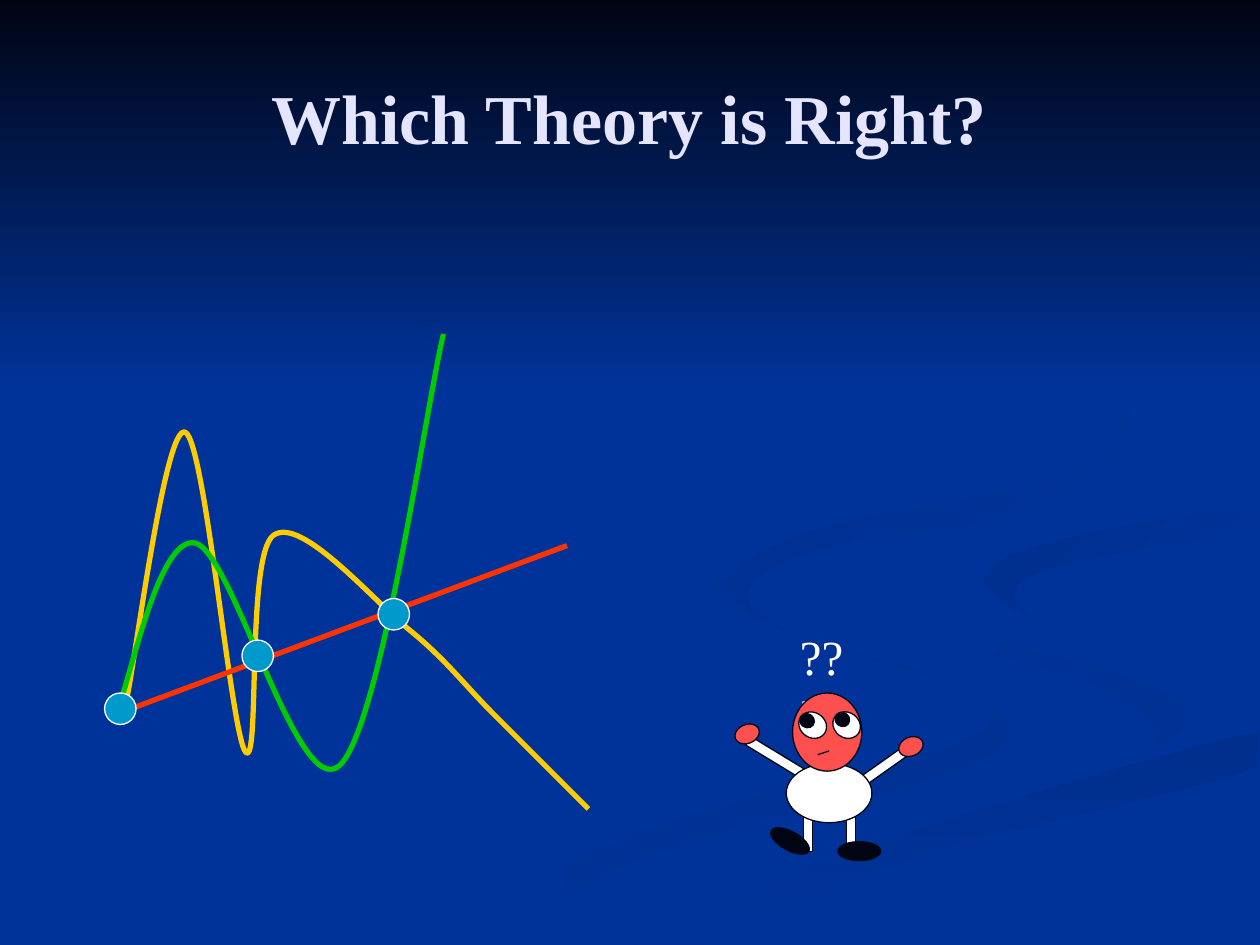
from lxml import etree
from pptx import Presentation
from pptx.dml.color import RGBColor
from pptx.enum.shapes import MSO_CONNECTOR, MSO_SHAPE
from pptx.enum.text import MSO_ANCHOR, PP_ALIGN
from pptx.oxml.ns import qn
from pptx.util import Cm, Pt

ELLIPSE, RECTANGLE = MSO_SHAPE.OVAL, MSO_SHAPE.RECTANGLE
STRAIGHT = MSO_CONNECTOR.STRAIGHT
CENTER, MIDDLE = PP_ALIGN.CENTER, MSO_ANCHOR.MIDDLE

BLUE = RGBColor(0x00, 0x33, 0x99)
SHADE_BLUE = RGBColor(0x00, 0x31, 0x93)
DEEP_BLUE = RGBColor(0x00, 0x2F, 0x8D)
INK = RGBColor(0x00, 0x05, 0x14)
WHITE = RGBColor(0xFF, 0xFF, 0xFF)
LAVENDER = RGBColor(0xE5, 0xE5, 0xFF)
YELLOW = RGBColor(0xFF, 0xCC, 0x00)
GREEN = RGBColor(0x00, 0xCC, 0x00)
RED = RGBColor(0xFF, 0x33, 0x00)
SKIN = RGBColor(0xFF, 0x50, 0x50)
CYAN = RGBColor(0x00, 0x99, 0xCC)

FONT = "Times New Roman"
GRID_CM = 2.54  # the slide is laid out on a grid of 10 by 7.5 units
WIDTH, HEIGHT = 10, 7.5

# Ribbons of the backdrop: start colour, end colour, clockwise angle, outline
RIBBONS = [
    (BLUE, SHADE_BLUE, 0, [
        (5.75, 4.59), (5.72, 4.76), (6.31, 5.05), (7.41, 5.39), (7.86, 5.66),
        (7.39, 5.98), (5.39, 6.49), (3, 7.49), (3.61, 7.49), (5.32, 6.74),
        (7.4, 6.18), (8, 5.81), (7.45, 5.38), (6.26, 5.02)]),
    (BLUE, SHADE_BLUE, 45, [
        (7.24, 4.64), (7.66, 5.12), (8.68, 5.44), (9.18, 5.81),
        (8.94, 6.05), (9.43, 5.7), (8.88, 5.35), (7.58, 4.98)]),
    (DEEP_BLUE, BLUE, 90, [
        (5.03, 7.49), (5.71, 7.49), (7.22, 6.82), (9.98, 6.09),
        (9.98, 5.81), (7.64, 6.47), (6.3, 6.93)]),
    (DEEP_BLUE, BLUE, 45, [
        (7.81, 4.6), (8.26, 4.96), (8.05, 4.72), (8.43, 4.48),
        (9.98, 4.2), (9.98, 4.02), (8.35, 4.3)]),
    (DEEP_BLUE, BLUE, 45, [
        (7.62, 2.33), (8.55, 2.85), (8.89, 3.35), (8.42, 3.78),
        (6.49, 4.2), (5.77, 4.62), (6.22, 5), (5.93, 4.7),
        (6.49, 4.36), (8.07, 4.07), (8.94, 3.44), (8.43, 2.75)]),
]

# Competing theories: smooth curves through these points
CURVES = [
    (YELLOW, [(1, 5.58), (1.47, 3.43), (1.95, 5.97), (2.17, 4.25),
              (3.25, 5), (3.92, 5.67), (4.67, 6.42)]),
    (GREEN, [(0.92, 5.67), (1.55, 4.31), (2.69, 6.08), (3.52, 2.65)]),
]
OBSERVATIONS = [(0.83, 5.5), (1.92, 5.08), (3, 4.75)]

# Puzzled figure: preset, fill, size, then left, top and rotation of each part
FIGURE_PARTS = [
    (RECTANGLE, WHITE, (0.54, 0.08), [(5.9, 5.98, 31.3), (6.72, 6.06, 324.7)]),  # arms
    (RECTANGLE, WHITE, (0.07, 0.35), [(6.72, 6.4, 0), (6.38, 6.41, 0)]),         # legs
    (ELLIPSE, WHITE, (0.68, 0.47), [(6.24, 6.06, 0)]),                           # body
    (ELLIPSE, SKIN, (0.55, 0.62), [(6.29, 5.5, 0)]),                             # head
    (ELLIPSE, WHITE, (0.2, 0.23), [(6.35, 5.64, 304.3), (6.62, 5.64, 307.8)]),   # eyes
    (ELLIPSE, INK, (0.11, 0.12), [(6.35, 5.66, 304.3), (6.63, 5.65, 307.8)]),    # pupils
    (ELLIPSE, INK, (0.34, 0.15), [(6.1, 6.6, 28.7), (6.65, 6.68, 0)]),           # feet
    (ELLIPSE, SKIN, (0.2, 0.15), [(7.13, 5.85, 337.1), (5.83, 5.75, 337.1)]),    # hands
]


def lengths(values):
    return [Cm(value * GRID_CM) for value in values]


def set_line(shape, color, width):
    shape.line.color.rgb = color
    shape.line.width = Pt(width)


def set_gradient(shape, start_color, end_color, angle):
    shape.line.fill.background()
    shape.fill.gradient()
    shape.fill.gradient_angle = -angle % 360
    for stop, color in zip(shape.fill.gradient_stops, (start_color, end_color)):
        stop.color.rgb = color


def control_point(point, before, after, direction):
    """Place a Bézier control point along the neighbours' chord, on the slide."""
    x, y = [p + direction * (a - b) / 6 for p, b, a in zip(point, before, after)]
    return min(x, WIDTH), min(y, HEIGHT)


def add_smooth_outline(shapes, points, close):
    if close:
        padded = [points[-1], *points, points[0], points[1]]
    else:
        padded = [points[0], *points, points[-1]]
    segments = []
    for before, start, end, after in zip(padded, padded[1:], padded[2:], padded[3:]):
        segments += [control_point(start, before, end, 1),
                     control_point(end, start, after, -1), end]
    builder = shapes.build_freeform(*lengths(points[0]))
    builder.add_line_segments([lengths(point) for point in segments], close=False)
    shape = builder.convert_to_shape()
    shape.shadow.inherit = False
    # Turn every three straight segments into one cubic segment
    outline = next(shape._element.iter(qn("a:path")))
    straight = outline.findall(qn("a:lnTo"))
    for first in range(0, len(straight), 3):
        cubic = etree.SubElement(outline, qn("a:cubicBezTo"))
        for segment in straight[first:first + 3]:
            cubic.append(segment[0])
            outline.remove(segment)
    if close:
        etree.SubElement(outline, qn("a:close"))
    return shape


def add_curve(shapes, color, points):
    shape = add_smooth_outline(shapes, points, close=False)
    shape.fill.background()
    set_line(shape, color, 3)


def add_straight_line(shapes, start, end, color, width):
    line = shapes.add_connector(STRAIGHT, *lengths(start + end))
    set_line(line, color, width)
    etree.SubElement(line._element.spPr, qn("a:effectLst"))


def add_part(shapes, preset, box, fill, line_color, rotation=0):
    shape = shapes.add_shape(preset, *lengths(box))
    shape.shadow.inherit = False
    shape.fill.solid()
    shape.fill.fore_color.rgb = fill
    set_line(shape, line_color, 0.75)
    shape.rotation = rotation


def add_backdrop(shapes):
    backdrop = shapes.add_group_shape()
    for start_color, end_color, angle, points in RIBBONS:
        ribbon = add_smooth_outline(backdrop.shapes, points, close=True)
        set_gradient(ribbon, start_color, end_color, angle)
    sky = backdrop.shapes.add_shape(RECTANGLE, *lengths((0, 0, WIDTH, 3.08)))
    sky.shadow.inherit = False
    set_gradient(sky, INK, BLUE, 90)
    return backdrop


def add_figure(shapes):
    figure = shapes.add_group_shape()
    for preset, fill, size, places in FIGURE_PARTS:
        for left, top, rotation in places:
            add_part(figure.shapes, preset, (left, top, *size), fill, INK, rotation)
    add_straight_line(figure.shapes, (6.49, 5.99), (6.58, 5.96), INK, 0.75)


def write_text(shape, box, text, size, color, bold=False):
    shape.left, shape.top, shape.width, shape.height = lengths(box)
    shape.text_frame.word_wrap = True
    paragraph = shape.text_frame.paragraphs[0]
    run = paragraph.add_run()
    run.text = text
    run.font.name, run.font.size, run.font.bold = FONT, Pt(size), bold
    run.font.color.rgb = color
    return paragraph


def main():
    presentation = Presentation()
    presentation.slide_width, presentation.slide_height = lengths((WIDTH, HEIGHT))
    slide = presentation.slides.add_slide(presentation.slide_layouts[5])
    shapes = slide.shapes
    slide.background.fill.solid()
    slide.background.fill.fore_color.rgb = BLUE
    backdrop = add_backdrop(shapes)

    # Theories
    for color, points in CURVES:
        add_curve(shapes, color, points)
    add_straight_line(shapes, (0.92, 5.67), (4.5, 4.33), RED, 3)

    # Title, brought in front of the backdrop
    title = shapes.title
    paragraph = write_text(title, (0.58, 0.3, 8.83, 1.25),
                           "Which Theory is Right?", 40, LAVENDER, bold=True)
    paragraph.alignment = CENTER
    title.text_frame.vertical_anchor = MIDDLE
    backdrop._element.addnext(title._element)

    # Puzzled figure; its head covers the last question mark
    question_box = (6.25, 4.92, 0.63, 0.57)
    question = shapes.add_textbox(*lengths(question_box))
    write_text(question, question_box, "???", 28, WHITE)
    add_figure(shapes)

    # Observed points
    for left, top in OBSERVATIONS:
        add_part(shapes, ELLIPSE, (left, top, 0.25, 0.25), CYAN, WHITE)

    presentation.save("out.pptx")


if __name__ == "__main__":
    main()
